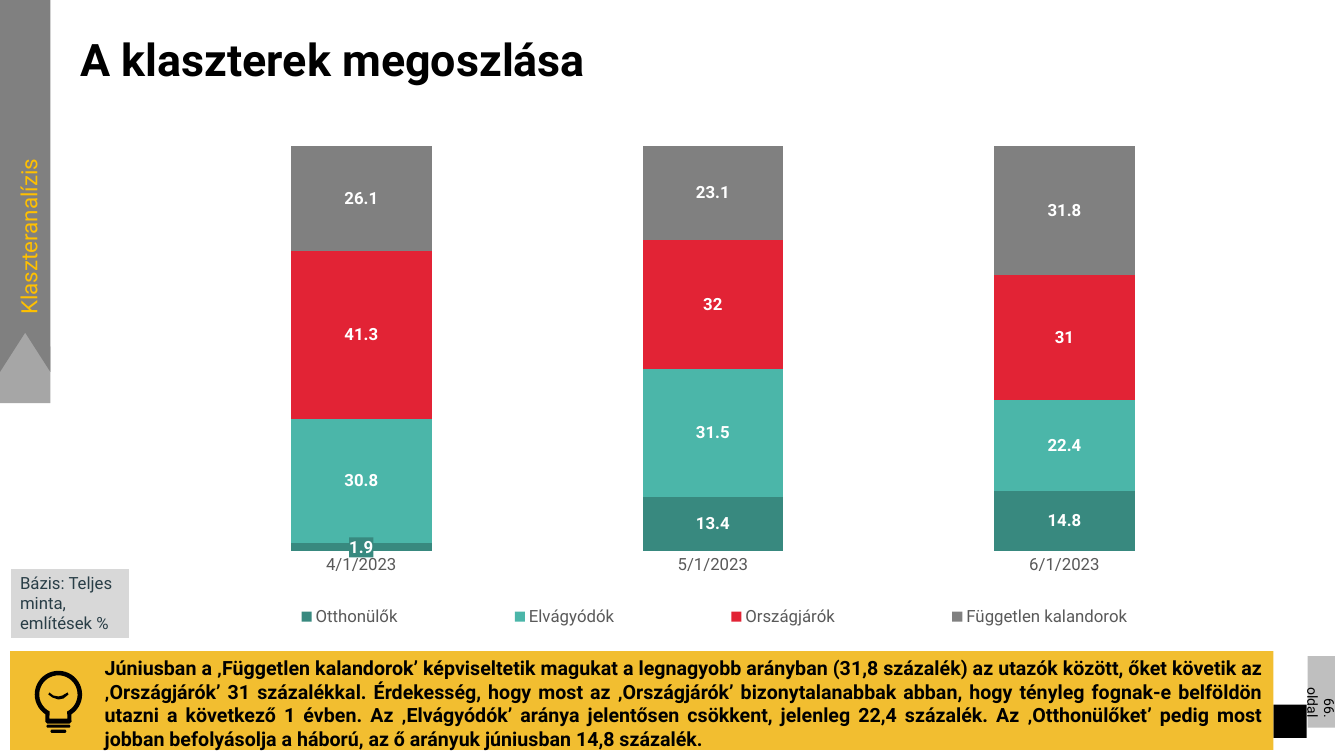
from math import cos, radians, sin

from lxml import etree
from pptx import Presentation
from pptx.chart.data import CategoryChartData
from pptx.dml.color import RGBColor
from pptx.enum.chart import XL_CHART_TYPE, XL_LABEL_POSITION, XL_LEGEND_POSITION, XL_TICK_MARK
from pptx.enum.shapes import MSO_SHAPE
from pptx.enum.text import MSO_ANCHOR, PP_ALIGN
from pptx.oxml import parse_xml
from pptx.oxml.ns import nsdecls, qn
from pptx.util import Pt

STACKED = XL_CHART_TYPE.COLUMN_STACKED
CENTER_LABEL = XL_LABEL_POSITION.CENTER
BOTTOM = XL_LEGEND_POSITION.BOTTOM
NO_TICK = XL_TICK_MARK.NONE
RECTANGLE = MSO_SHAPE.RECTANGLE
TOP, MIDDLE = MSO_ANCHOR.TOP, MSO_ANCHOR.MIDDLE
LEFT, RIGHT, JUSTIFY = PP_ALIGN.LEFT, PP_ALIGN.RIGHT, PP_ALIGN.JUSTIFY

EMU_PER_PX = 9144  # 100 px to the inch
FONT = "Roboto"
DATE_FORMAT = "m/d/yyyy"
COLORS = {
    "black": "000000", "white": "FFFFFF", "ribbon": "808080", "tip": "A6A6A6",
    "page": "BFBFBF", "note": "D8D8D8", "note_text": "293E47", "banner": "F2BE30",
    "section": "FFC000", "axis": "595959",
    "home": "38897F", "longing": "4BB6A9", "touring": "E22335", "free": "808080",
}

DATES = [45026, 45068, 45091]  # serial day numbers
CLUSTERS = [
    ("Otthonülők", "home", (1.9, 13.4, 14.8)),
    ("Elvágyódók", "longing", (30.8, 31.5, 22.4)),
    ("Országjárók", "touring", (41.3, 32, 31)),
    ("Független kalandorok", "free", (26.1, 23.1, 31.8)),
]
SUMMARY = (
    "Júniusban a ‚Független kalandorok’ képviseltetik magukat a legnagyobb arányban "
    "(31,8 százalék) az utazók között, őket követik az ‚Országjárók’ 31 százalékkal. "
    "Érdekesség, hogy most az ‚Országjárók’ bizonytalanabbak abban, hogy tényleg "
    "fognak-e belföldön utazni a következő 1 évben. Az ‚Elvágyódók’ aránya jelentősen "
    "csökkent, jelenleg 22,4 százalék. Az ‚Otthonülőket’ pedig most jobban befolyásolja "
    "a háború, az ő arányuk júniusban 14,8 százalék."
)


def px(value):
    return round(value * EMU_PER_PX)


def rgb(name):
    return RGBColor.from_string(COLORS[name])


def arc(center, radius, start, end, steps=36):
    """Points along an arc, with angles in degrees."""
    angles = [radians(start + (end - start) * i / steps) for i in range(steps + 1)]
    return [(center[0] + radius * cos(a), center[1] + radius * sin(a)) for a in angles]


def bar(left, top, width, height):
    """Outline of a flat bar with pointed ends."""
    right, bottom, middle = left + width, top + height, top + height / 2
    return [(left, middle), (left + 1, top), (right - 1, top),
            (right, middle), (right - 1, bottom), (left + 1, bottom)]


class SlideBuilder:
    def __init__(self, presentation):
        self.slide = presentation.slides.add_slide(presentation.slide_layouts[5])
        self.shapes = self.slide.shapes

    def style_font(self, font, size, color, bold=False):
        values = {"name": FONT, "size": Pt(size), "bold": bold}
        for name, value in values.items():
            setattr(font, name, value)
        font.color.rgb = rgb(color)

    def fill_text(self, shape, text, size, color, bold=False, align=LEFT, anchor=TOP):
        frame = shape.text_frame
        frame.word_wrap = True
        frame.vertical_anchor = anchor
        paragraph = frame.paragraphs[0]
        paragraph.text = text
        paragraph.alignment = align
        self.style_font(paragraph.runs[0].font, size, color, bold)
        return paragraph

    def paint(self, shape, fill, line=None):
        shape.shadow.inherit = False
        shape.fill.solid()
        shape.fill.fore_color.rgb = rgb(fill)
        if line:
            shape.line.color.rgb = rgb(line)
            shape.line.width = Pt(1.5)
        else:
            shape.line.fill.background()
        return shape

    def title(self, text, *box):
        shape = self.shapes.title
        for name, value in zip(("left", "top", "width", "height"), box):
            setattr(shape, name, px(value))
        shape.text_frame.margin_left = px(30)
        self.fill_text(shape, text, 32, "black", True).line_spacing = 0.9

    def box(self, fill, *box, line=None):
        shape = self.shapes.add_shape(RECTANGLE, *map(px, box))
        return self.paint(shape, fill, line)

    def text(self, text, *box, rotation=0, **style):
        shape = self.shapes.add_textbox(*map(px, box))
        shape.rotation = rotation
        self.fill_text(shape, text, **style)

    def outline(self, fill, *contours):
        builder = None
        for contour in contours:
            points = [(px(x), px(y)) for x, y in contour]
            if builder is None:
                builder = self.shapes.build_freeform(*points[0], scale=1.0)
            else:
                builder.move_to(*points[0])
            builder.add_line_segments(points[1:], close=True)
        self.paint(builder.convert_to_shape(), fill)

    def place(self, part, index, x, y, width, height, inner=False):
        """Give a chart part a fixed place, in fractions of the chart."""
        for old in part.findall(qn("c:layout")):
            part.remove(old)
        layout = etree.Element(qn("c:layout"))
        part.insert(index, layout)
        manual = etree.SubElement(layout, qn("c:manualLayout"))
        values = [("layoutTarget", "inner")] if inner else []
        values += [("xMode", "edge"), ("yMode", "edge"),
                   ("x", x), ("y", y), ("w", width), ("h", height)]
        for tag, value in values:
            etree.SubElement(manual, qn("c:" + tag)).set("val", str(value))

    def stacked_chart(self, *box):
        data = CategoryChartData(number_format="General")
        data.categories = DATES
        data.categories.number_format = DATE_FORMAT
        for name, _, values in CLUSTERS:
            data.add_series(name, values)
        chart = self.shapes.add_chart(STACKED, *map(px, box), data).chart
        self.style_font(chart.font, 10, "black")
        chart.has_title = False

        # Axes
        dates, shares = chart.category_axis, chart.value_axis
        dates.major_tick_mark = NO_TICK
        dates.format.line.fill.background()
        dates.tick_labels.number_format = DATE_FORMAT
        dates.tick_labels.number_format_is_linked = False
        self.style_font(dates.tick_labels.font, 12, "axis")
        shares.minimum_scale, shares.maximum_scale = 0, 100
        shares.has_major_gridlines = False
        shares.visible = False

        # Columns and their labels
        plot = chart.plots[0]
        plot.gap_width, plot.overlap, plot.vary_by_categories = 150, 100, False
        for series, (_, color, _) in zip(plot.series, CLUSTERS):
            series.format.fill.solid()
            series.format.fill.fore_color.rgb = rgb(color)
            labels = series.data_labels
            labels.show_value = True
            labels.position = CENTER_LABEL
            self.style_font(labels.font, 12, "white", True)
            backing = parse_xml(
                f'<c:spPr {nsdecls("c", "a")}><a:solidFill>'
                f'<a:srgbClr val="{COLORS[color]}"/></a:solidFill></c:spPr>')
            labels._element.find(qn("c:txPr")).addprevious(backing)

        # Legend and plot area
        chart.has_legend = True
        legend = chart.legend
        legend.position = BOTTOM
        legend.include_in_layout = False
        self.style_font(legend.font, 12, "axis")
        self.place(chart._chartSpace.chart.plotArea, 0, 0.046, 0.072, 0.925, 0.743, inner=True)
        self.place(legend._element, 1, 0.05, 0.9, 0.92, 0.07)


def main():
    presentation = Presentation()
    presentation.slide_width, presentation.slide_height = px(1333), px(750)
    page = SlideBuilder(presentation)

    # Title and page number
    page.title("A klaszterek megoszlása", 50, 32, 959, 111)
    page.box("black", 1263, 699, 33, 33)
    number = page.box("page", 1297, 651, 27, 71)
    page.fill_text(number, "66. oldal", 10, "black", align=RIGHT, anchor=MIDDLE)
    number.text_frame._txBody.bodyPr.set("vert", "vert")

    # Section ribbon
    page.outline("tip", [(0, 400), (50, 400), (50, 344), (25, 321), (0, 344)])
    page.outline("ribbon", [(0, 369), (25, 330), (50, 369), (50, 0), (0, 0)])
    page.text("Klaszteranalízis", -110, 165, 277, 37, rotation=270, size=16, color="section")

    # Sample note
    note = page.box("note", 10, 563, 119, 71, line="white")
    page.fill_text(note, "Bázis: Teljes minta, említések %", 12, "note_text")

    # Summary banner with light bulb
    page.box("banner", 10, 646, 1253, 98)
    center = (58, 689)
    glass = arc(center, 23.5, 123, 417) + [(71, 716), (69, 718), (47, 718), (45, 716)]
    hollow = arc(center, 19, 423, 117) + [(49, 713), (67, 713)]
    smile = [(49, 687), (48, 689), (52, 692), (58, 694), (63, 693), (68, 689),
             (67, 687), (62, 690), (58, 691), (53, 690)]
    page.outline("black", glass, hollow, smile, bar(46, 719, 24, 3), bar(50, 724, 16, 3))
    page.text(SUMMARY, 94, 646, 1169, 104, size=14, color="black", bold=True, align=JUSTIFY)

    # Cluster shares
    page.stacked_chart(132, 106, 1131, 541)
    presentation.save("out.pptx")


if __name__ == "__main__":
    main()
